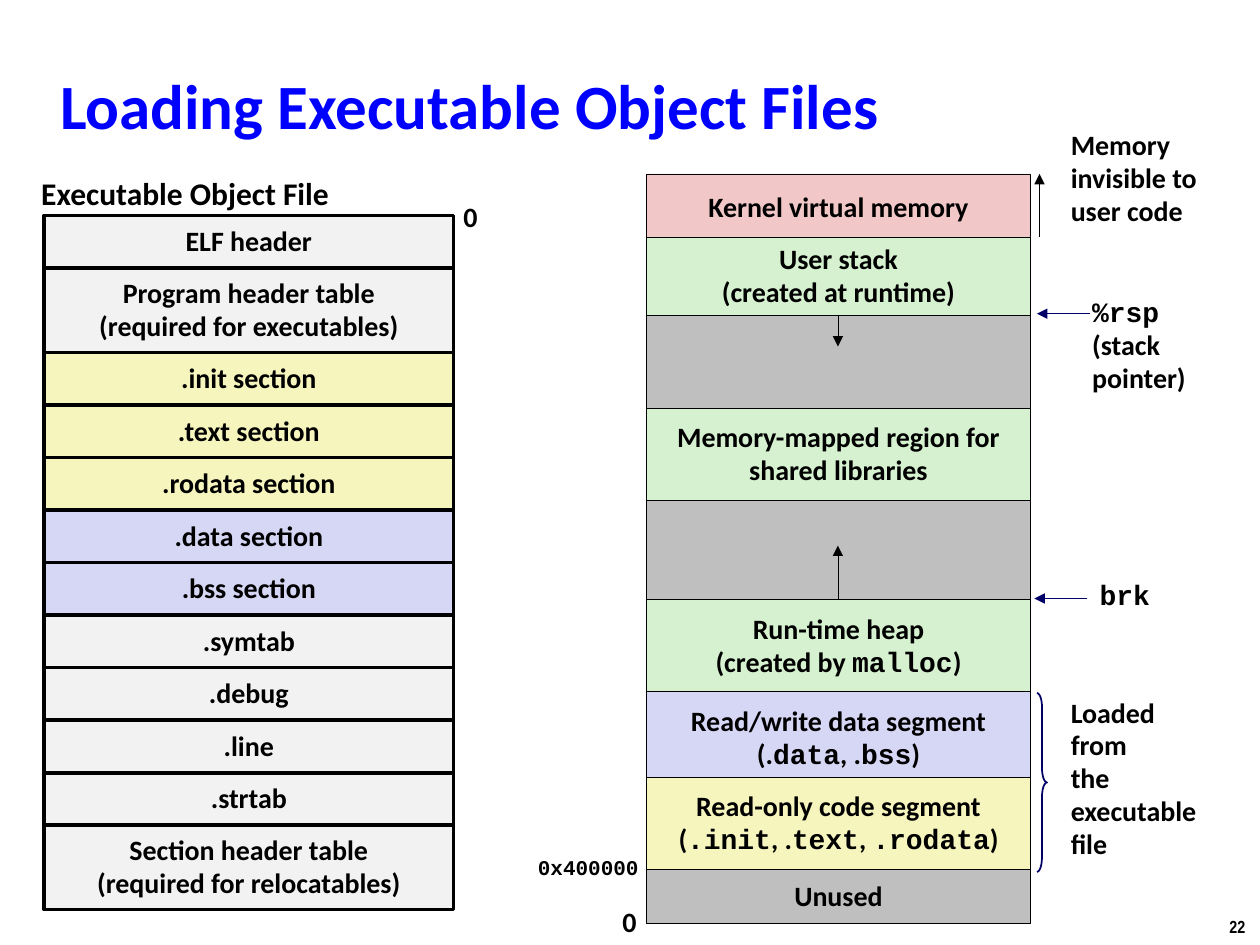
from dataclasses import dataclass

from lxml import etree
from pptx import Presentation
from pptx.dml.color import RGBColor
from pptx.enum.shapes import MSO_CONNECTOR, MSO_SHAPE
from pptx.enum.text import MSO_ANCHOR, MSO_AUTO_SIZE, PP_ALIGN
from pptx.oxml.ns import qn
from pptx.slide import Slide
from pptx.util import Inches, Pt

LEFT, CENTER = PP_ALIGN.LEFT, PP_ALIGN.CENTER
TOP, MIDDLE = MSO_ANCHOR.TOP, MSO_ANCHOR.MIDDLE
FIT = MSO_AUTO_SIZE.SHAPE_TO_FIT_TEXT
RECT, BRACE = MSO_SHAPE.RECTANGLE, MSO_SHAPE.RIGHT_BRACE
STRAIGHT = MSO_CONNECTOR.STRAIGHT

COLORS = {
    "black": "000000",
    "title": "0000FF",
    "navy": "000066",
    "header": "F2F2F2",
    "code": "F6F5BD",
    "data": "D6D6F5",
    "kernel": "F1C7C7",
    "dynamic": "D5F1CF",
    "unused": "BFBFBF",
}

FILE_SECTIONS = [
    ("ELF header", "header"),
    ("Program header table\n(required for executables)", "header"),
    (".init section", "code"),
    (".text section", "code"),
    (".rodata section", "code"),
    (".data section", "data"),
    (".bss section", "data"),
    (".symtab", "header"),
    (".debug", "header"),
    (".line", "header"),
    (".strtab", "header"),
    ("Section header table\n(required for relocatables)", "header"),
]

MEMORY_REGIONS = [
    (13.8, 5.3, "Kernel virtual memory", "kernel"),
    (22.5, 9.9, "", "unused"),
    (18.8, 6.2, "User stack\n(created at runtime)", "dynamic"),
    (32.4, 7.3, "Memory-mapped region for\nshared libraries", "dynamic"),
    (39.7, 7.9, "", "unused"),
    (47.6, 7.3, "Run-time heap\n(created by `malloc`)", "dynamic"),
    (54.9, 7.3, "Read/write data segment\n(.`data`, .`bss`)", "data"),
    (61.7, 7.3, "Read-only code segment\n(`.init`, .`text`, `.rodata`)", "code"),
    (69, 4.3, "Unused", "unused"),
]

ARROWS = [
    (66.5, 47.5, 66.5, 43.3, "black"),
    (66.5, 25, 66.5, 27.5, "black"),
    (82.5, 18.8, 82.5, 13.8, "black"),
    (86.5, 24.9, 82.3, 24.9, "navy"),
    (86.3, 47.5, 82.1, 47.5, "navy"),
]

LABELS = [
    (35.8, 15.5, 3.1, 3.7, "0"),
    (48.4, 71.4, 3.1, 3.7, "0"),
    (85.7, 23.1, 9.5, 8.8, "`%rsp`\n(stack\npointer)"),
    (86.3, 45.6, 6, 3.6, "`brk`"),
    (84, 54.8, 12.6, 14.2, "Loaded\nfrom\nthe\nexecutable\nfile"),
]


@dataclass
class Deck:
    """Draw on a slide divided into 100 columns and 75 rows."""

    slide: Slide
    cell: int = Inches(0.1)
    font: str = "Calibri"
    mono: str = "Courier New"
    size: float = 16

    def box(self, *lengths):
        return [round(n * self.cell) for n in lengths]

    def color(self, name):
        return RGBColor.from_string(COLORS[name])

    def set_text(self, tf, text, size=None, color="black", font=None,
                 align=LEFT, anchor=TOP, wrap=False):
        tf.word_wrap = wrap
        tf.vertical_anchor = anchor
        for i, line in enumerate(text.split("\n")):
            p = tf.add_paragraph() if i else tf.paragraphs[0]
            p.alignment = align
            p.line_spacing = 0.94 if line.startswith("`") else 0.98
            p.font.name = font or self.font
            p.font.size = Pt(size or self.size)
            p.font.bold = True
            p.font.color.rgb = self.color(color)
            for j, part in enumerate(line.split("`")):
                if part:
                    r = p.add_run()
                    r.text = part
                    if j % 2:
                        r.font.name = self.mono

    def label(self, x, y, w, h, text, **style):
        sp = self.slide.shapes.add_textbox(*self.box(x, y, w, h))
        self.set_text(sp.text_frame, text, **style)
        sp.text_frame.auto_size = FIT

    def title(self, x, y, w, h, text):
        sp = self.slide.shapes.add_textbox(*self.box(x, y, w, h))
        self.set_text(sp.text_frame, text, size=36, color="title",
                      anchor=MIDDLE, wrap=True)

    def block(self, x, y, w, h, text, fill, line):
        sp = self.slide.shapes.add_shape(RECT, *self.box(x, y, w, h))
        sp.shadow.inherit = False
        sp.fill.solid()
        sp.fill.fore_color.rgb = self.color(fill)
        sp.line.color.rgb = self.color("black")
        sp.line.width = Pt(line)
        if text:
            self.set_text(sp.text_frame, text, align=CENTER, anchor=MIDDLE)

    def brace(self, x, y, w, h):
        sp = self.slide.shapes.add_shape(BRACE, *self.box(x, y, w, h))
        sp.shadow.inherit = False
        sp.adjustments[0] = 1.42
        sp.fill.background()
        sp.line.color.rgb = self.color("navy")
        sp.line.width = Pt(1)

    def arrow(self, x1, y1, x2, y2, color):
        c = self.slide.shapes.add_connector(STRAIGHT, *self.box(x1, y1, x2, y2))
        c.line.color.rgb = self.color(color)
        c.line.width = Pt(0.25)
        props = c.element.spPr
        etree.SubElement(props.find(qn("a:ln")), qn("a:tailEnd"), type="triangle")
        etree.SubElement(props, qn("a:effectLst"))


def main():
    prs = Presentation()
    prs.slide_width, prs.slide_height = Inches(10), Inches(7.5)
    deck = Deck(prs.slides.add_slide(prs.slide_layouts[6]))

    deck.title(3.8, 4.2, 95.3, 8.6, "Loading Executable Object Files")
    deck.label(2.2, 13.5, 25, 4, "Executable Object File", size=18, align=CENTER)

    y = 17.1
    for text, fill in FILE_SECTIONS:
        h = 6.7 if "\n" in text else 4.17
        deck.block(3.5, y, 32.5, h, text, fill, line=2)
        y += h

    for y, h, text, fill in MEMORY_REGIONS:
        deck.block(51.3, y, 30.5, h, text, fill, line=0.25)
    for ends in ARROWS:
        deck.arrow(*ends)
    deck.brace(82.3, 55, 0.8, 14.2)

    for label in LABELS:
        deck.label(*label)
    deck.label(41.7, 67.5, 10.1, 3, "`0x400000`", size=12)
    deck.label(84, 9.8, 14.4, 9, "Memory\ninvisible to user code", wrap=True)
    deck.label(96.6, 72.3, 3.4, 2.7, "22", size=10, font="Arial Narrow")
    prs.save("out.pptx")


if __name__ == "__main__":
    main()
